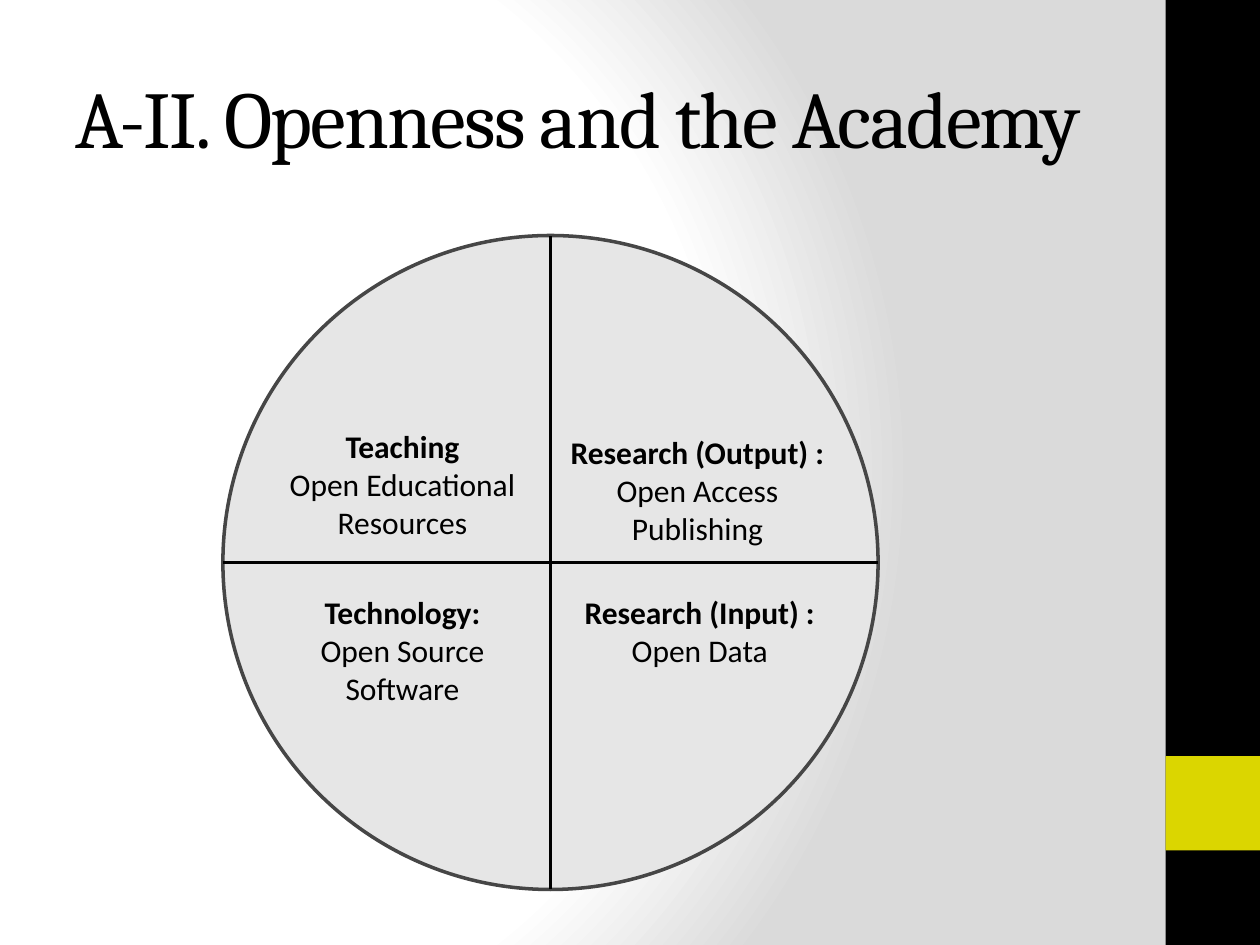
from lxml import etree
from pptx import Presentation
from pptx.dml.color import RGBColor
from pptx.enum.shapes import MSO_CONNECTOR, MSO_SHAPE
from pptx.enum.text import MSO_ANCHOR, PP_ALIGN
from pptx.oxml import parse_xml
from pptx.oxml.ns import nsdecls, qn
from pptx.util import Pt


def color(hex_string):
    return RGBColor.from_string(hex_string)


def add_filled_shape(kind, left, top, width, height, fill):
    shape = page.shapes.add_shape(kind, Pt(left), Pt(top), Pt(width), Pt(height))
    shape.shadow.inherit = False
    shape.fill.solid()
    shape.fill.fore_color.rgb = color(fill)
    shape.line.fill.background()
    return shape


deck = Presentation()
deck.slide_width, deck.slide_height = Pt(720), Pt(540)
page = deck.slides.add_slide(deck.slide_layouts[6])

# Background: a radial gradient centred left of the middle
page.background.fill.gradient()
gradient = page.background.fill._fill._gradFill
stops = "".join(
    f'<a:gs pos="{position * 1000}"><a:srgbClr val="{value}"/></a:gs>'
    for position, value in [(0, "FFFFFF"), (75, "FFFFFF"), (100, "DADADA")]
)
gradient.getparent().replace(gradient, parse_xml(
    f'<a:gradFill {nsdecls("a")} rotWithShape="1"><a:gsLst>{stops}</a:gsLst>'
    '<a:path path="circle"><a:fillToRect l="20000" t="50000" r="100000" b="50000"/></a:path>'
    '</a:gradFill>'
))

# Side band
add_filled_shape(MSO_SHAPE.RECTANGLE, 666, 0, 54, 540, "000000")
add_filled_shape(MSO_SHAPE.RECTANGLE, 666, 432, 54, 54, "DBD600")

# Title
title = page.shapes.add_textbox(Pt(36), Pt(21.6), Pt(600), Pt(90))
title.text_frame.word_wrap = True
title.text_frame.vertical_anchor = MSO_ANCHOR.MIDDLE
paragraph = title.text_frame.paragraphs[0]
span = paragraph.add_run()
span.text = "A-II. Openness and the Academy"
span.font.name = "Cambria"
span.font.size = Pt(46)
span.font.color.rgb = color("000000")
span.font._element.set("spc", "-100")

# Circle
left, top, width, height = 127.4, 134.6, 374.4, 373.7
center_x, center_y = left + width / 2, top + height / 2
circle = add_filled_shape(MSO_SHAPE.OVAL, left, top, width, height, "E6E6E6")
circle.line.color.rgb = color("464646")
circle.line.width = Pt(2)

# Quadrant labels
quadrants = [
    (156.2, 240.5, 147.6, 72.7, "Teaching", "Open Educational Resources"),
    (315.4, 244.1, 166.3, 72.7, "Research (Output) :", "Open Access Publishing"),
    (156.2, 335.5, 147.6, 72.7, "Technology:", "Open Source Software"),
    (318.2, 335.5, 163.4, 51.1, "Research (Input) :", "Open Data"),
]
for *bounds, heading, detail in quadrants:
    box = add_filled_shape(MSO_SHAPE.RECTANGLE, *bounds, "E6E6E6")
    frame = box.text_frame
    frame.word_wrap = True
    frame.vertical_anchor = MSO_ANCHOR.TOP
    frame.text = f"{heading}\n{detail}"
    for paragraph, bold in zip(frame.paragraphs, (True, False)):
        paragraph.alignment = PP_ALIGN.CENTER
        paragraph.font.name = "Calibri"
        paragraph.font.size = Pt(18)
        paragraph.font.bold = bold
        paragraph.font.color.rgb = color("000000")

# Cross lines
for ends in [
    (left, center_y, left + width, center_y),
    (center_x, top + height, center_x, top),
]:
    divider = page.shapes.add_connector(MSO_CONNECTOR.STRAIGHT, *map(Pt, ends))
    divider.line.color.rgb = color("000000")
    divider.line.width = Pt(2.25)
    etree.SubElement(divider._element.spPr, qn("a:effectLst"))

deck.save("out.pptx")
